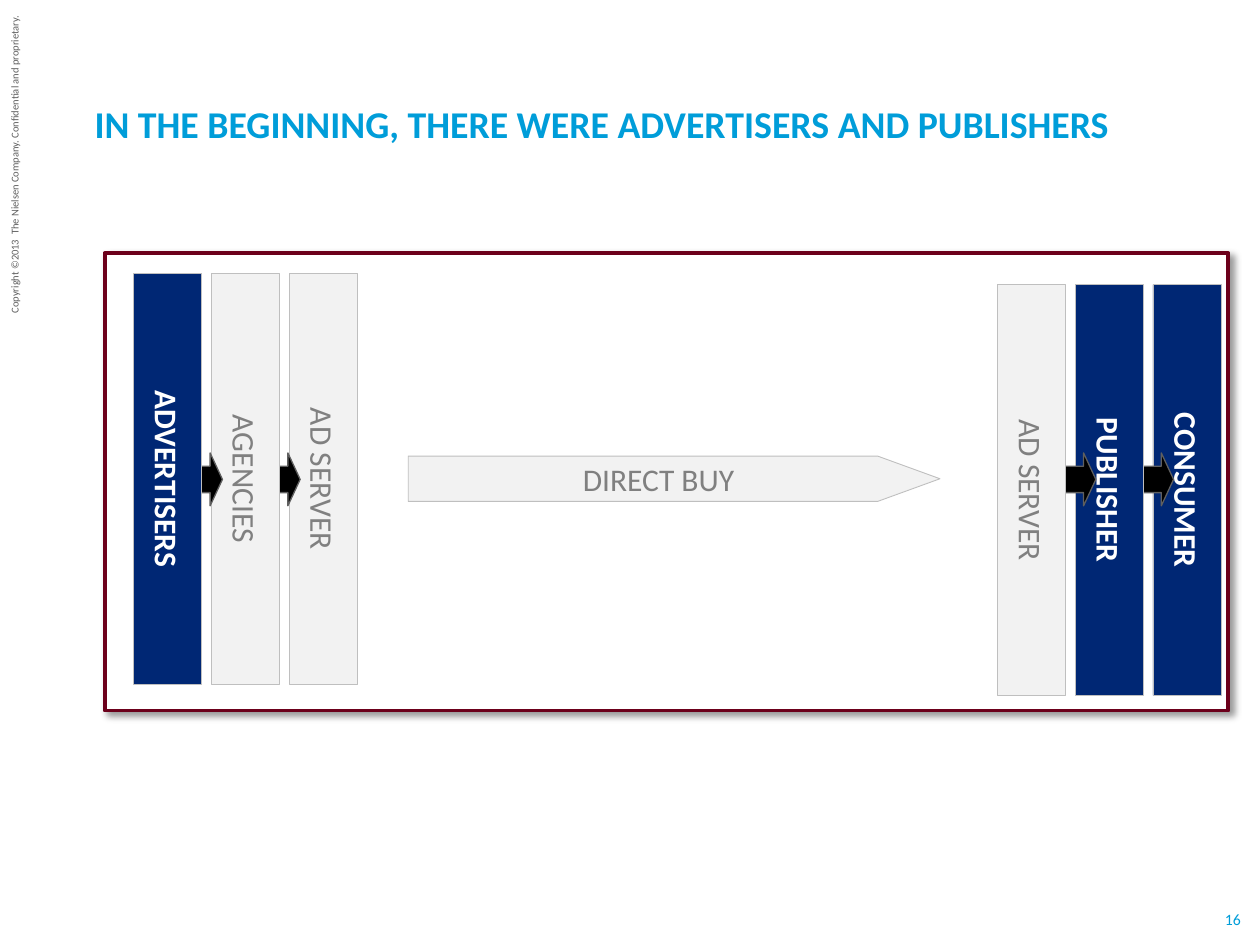
from dataclasses import dataclass

from lxml import etree
from pptx import Presentation
from pptx.dml.color import RGBColor
from pptx.enum.shapes import MSO_SHAPE
from pptx.enum.text import MSO_ANCHOR, PP_ALIGN
from pptx.oxml.ns import qn
from pptx.shapes.autoshape import Shape
from pptx.slide import Slide
from pptx.text.text import TextFrame
from pptx.util import Inches, Length, Pt

RECTANGLE = MSO_SHAPE.RECTANGLE
PENTAGON = MSO_SHAPE.PENTAGON
DOWN_ARROW = MSO_SHAPE.DOWN_ARROW
LEFT, CENTER = PP_ALIGN.LEFT, PP_ALIGN.CENTER
TOP, MIDDLE, BOTTOM = MSO_ANCHOR.TOP, MSO_ANCHOR.MIDDLE, MSO_ANCHOR.BOTTOM

SLIDE_WIDTH, SLIDE_HEIGHT = Inches(10), Inches(7.5)
TITLE_ONLY_LAYOUT = 5
BAR_PITCH = 6.17
BAR_WIDTH, BAR_HEIGHT = 5.4, 43.47


@dataclass(frozen=True)
class Theme:
    font: str = "Calibri"
    accent: str = "009DD9"
    navy: str = "002774"
    maroon: str = "6C001B"
    white: str = "FFFFFF"
    black: str = "000000"
    pale: str = "F2F2F2"
    border: str = "BFBFBF"
    gray: str = "808080"
    dark_gray: str = "5F5F5F"
    title_size: float = 21.6
    label_size: float = 18
    number_size: float = 9
    copyright_size: float = 6


@dataclass(frozen=True)
class Box:
    """Position and size in percent of the slide."""
    left: float
    top: float
    width: float
    height: float

    def lengths(self) -> tuple[Length, ...]:
        return (
            Length(round(SLIDE_WIDTH * self.left / 100)),
            Length(round(SLIDE_HEIGHT * self.top / 100)),
            Length(round(SLIDE_WIDTH * self.width / 100)),
            Length(round(SLIDE_HEIGHT * self.height / 100)),
        )


@dataclass(frozen=True)
class Stage:
    label: str
    active: bool = False


@dataclass(frozen=True)
class Chain:
    left: float
    top: float
    arrow_offset: float
    stages: tuple[Stage, ...]


THEME = Theme()
CHAINS = (
    Chain(10.6, 28.93, 3, (
        Stage("ADVERTISERS", True), Stage("AGENCIES"), Stage("AD SERVER"))),
    Chain(79.17, 30.13, 3.75, (
        Stage("AD SERVER"), Stage("PUBLISHER", True), Stage("CONSUMER", True))),
)


def write_text(frame: TextFrame, text: str, *, size: float, color: str,
               bold: bool = False, align: PP_ALIGN = CENTER,
               anchor: MSO_ANCHOR = MIDDLE, wrap: bool = True) -> None:
    frame.word_wrap = wrap
    frame.vertical_anchor = anchor
    paragraph = frame.paragraphs[0]
    paragraph.alignment = align
    paragraph.space_before = Pt(0)
    run = paragraph.add_run()
    run.text = text
    run.font.name = THEME.font
    run.font.size = Pt(size)
    run.font.bold = bold
    run.font.color.rgb = RGBColor.from_string(color)


def set_insets(frame: TextFrame, side: float = 0, bottom: float = 0) -> None:
    frame.margin_left = frame.margin_right = Inches(side)
    frame.margin_top = 0
    frame.margin_bottom = Inches(bottom)


def add_block(slide: Slide, kind: MSO_SHAPE, box: Box, *, fill: str,
              line: str, line_width: float = 0.5) -> Shape:
    shape = slide.shapes.add_shape(kind, *box.lengths())
    shape.shadow.inherit = False
    shape.fill.solid()
    shape.fill.fore_color.rgb = RGBColor.from_string(fill)
    shape.line.color.rgb = RGBColor.from_string(line)
    shape.line.width = Pt(line_width)
    return shape


def add_frame(slide: Slide) -> None:
    frame = add_block(slide, RECTANGLE, Box(8.3, 26.8, 89.2, 48.4),
                      fill=THEME.white, line=THEME.maroon, line_width=2.25)
    effects = frame._element.spPr.find(qn("a:effectLst"))
    shadow = etree.SubElement(
        effects, qn("a:outerShdw"), blurRad=str(Pt(4)), dist=str(Pt(3)),
        dir="2700000", algn="tl", rotWithShape="0")
    color = etree.SubElement(shadow, qn("a:srgbClr"), val=THEME.black)
    etree.SubElement(color, qn("a:alpha"), val="40000")


def add_bar(slide: Slide, stage: Stage, left: float, top: float) -> None:
    bar = add_block(slide, RECTANGLE, Box(left, top, BAR_WIDTH, BAR_HEIGHT),
                    fill=THEME.navy if stage.active else THEME.pale,
                    line=THEME.border)
    write_text(bar.text_frame, stage.label, size=THEME.label_size,
               color=THEME.white if stage.active else THEME.gray,
               bold=stage.active)
    bar.text_frame._txBody.bodyPr.set("vert", "vert")


def add_arrow(slide: Slide, left: float) -> None:
    arrow = add_block(slide, DOWN_ARROW, Box(left, 48.13, 4.2, 5.2),
                      fill=THEME.black, line=THEME.dark_gray, line_width=0.75)
    arrow.rotation = 270
    arrow.adjustments[0] = 0.5
    arrow.adjustments[1] = 0.25


def add_chain(slide: Slide, chain: Chain) -> None:
    last = len(chain.stages) - 1
    for index in range(last, -1, -1):
        left = chain.left + index * BAR_PITCH
        if index < last:
            add_arrow(slide, left + chain.arrow_offset)
        add_bar(slide, chain.stages[index], left, chain.top)


def add_direct_buy(slide: Slide) -> None:
    direct_buy = add_block(slide, PENTAGON, Box(32.4, 48.27, 42.2, 4.8),
                           fill=THEME.pale, line=THEME.border)
    direct_buy.adjustments[0] = 1.375
    write_text(direct_buy.text_frame, "DIRECT BUY",
               size=THEME.label_size, color=THEME.gray)


def add_title(slide: Slide) -> None:
    title = slide.shapes.title
    title.left, title.top, title.width, title.height = Box(
        6.5, 8.53, 88, 8.8).lengths()
    set_insets(title.text_frame, side=0.1, bottom=0.14)
    write_text(title.text_frame,
               "IN THE BEGINNING, THERE WERE ADVERTISERS AND PUBLISHERS",
               size=THEME.title_size, color=THEME.accent, bold=True,
               align=LEFT, anchor=BOTTOM)


def add_margin_texts(slide: Slide) -> None:
    copyright_line = slide.shapes.add_textbox(
        *Box(-11.8, 15.87, 25.9, 2.67).lengths())
    copyright_line.rotation = 270
    write_text(copyright_line.text_frame,
               "Copyright ©2013  The Nielsen Company. Confidential and proprietary.",
               size=THEME.copyright_size, color=THEME.dark_gray,
               align=LEFT, anchor=TOP, wrap=False)
    number = slide.shapes.add_textbox(*Box(97.1, 96.27, 1.5, 2).lengths())
    set_insets(number.text_frame)
    write_text(number.text_frame, "16", size=THEME.number_size,
               color=THEME.accent, wrap=False)


def main() -> None:
    presentation = Presentation()
    presentation.slide_width, presentation.slide_height = SLIDE_WIDTH, SLIDE_HEIGHT
    slide = presentation.slides.add_slide(
        presentation.slide_layouts[TITLE_ONLY_LAYOUT])
    add_margin_texts(slide)
    add_title(slide)
    add_frame(slide)
    add_direct_buy(slide)
    for chain in CHAINS:
        add_chain(slide, chain)
    presentation.save("out.pptx")


if __name__ == "__main__":
    main()
